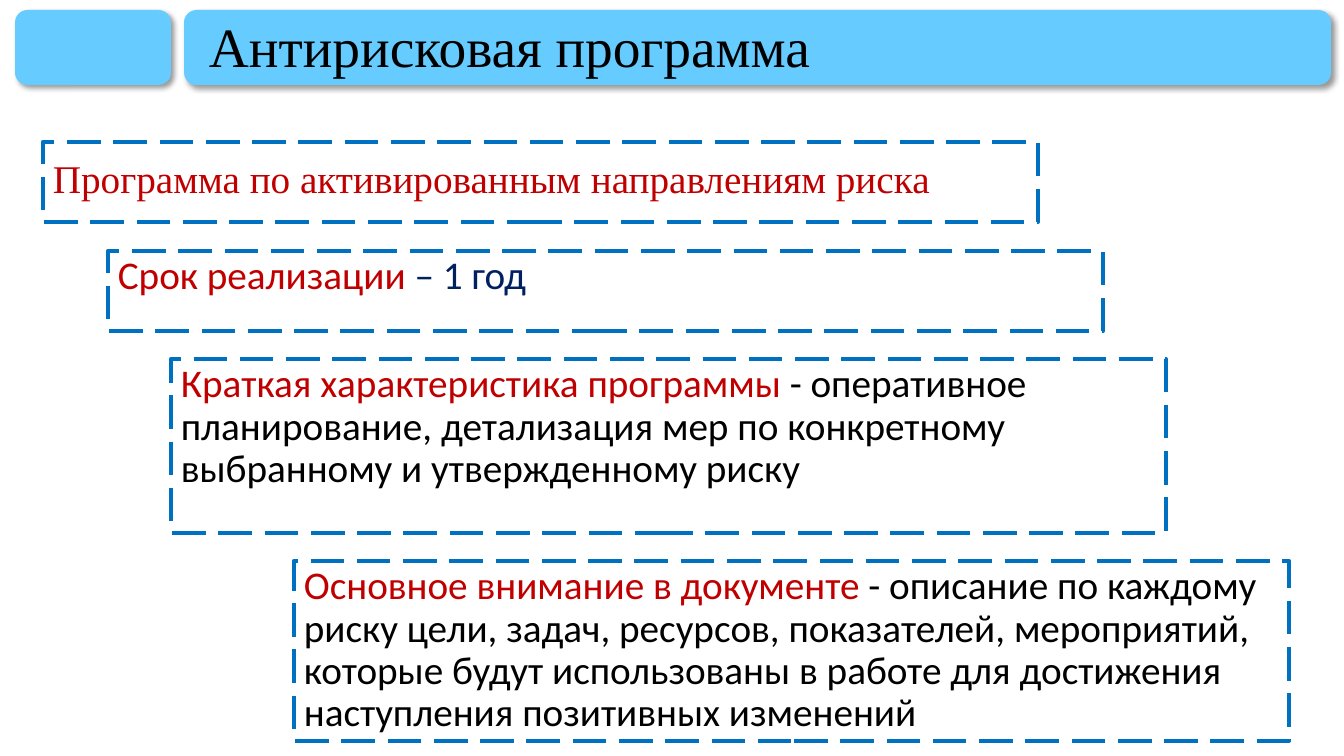
"""Builds a slide with a title bar and four stepped dashed boxes about a risk programme."""
from dataclasses import dataclass

import lxml.etree
import pptx
import pptx.dml.color
import pptx.enum.dml
import pptx.enum.shapes
import pptx.enum.text
import pptx.oxml
import pptx.oxml.ns
import pptx.util

SHAPES = pptx.enum.shapes.MSO_SHAPE
ALIGN = pptx.enum.text.PP_ALIGN
ANCHOR = pptx.enum.text.MSO_ANCHOR
PX = pptx.util.Inches(1) / 100.8


@dataclass(frozen=True)
class Theme:
    bar: str = "66CCFF"
    border: str = "0070C0"
    accent: str = "C00000"
    term: str = "002060"
    ink: str = "000000"
    serif: str = "Times New Roman"
    sans: str = "Calibri"
    title_size: float = 39.6
    body_size: float = 28
    border_width: float = 3


def color(value):
    return pptx.dml.color.RGBColor.from_string(value)


def apply(target, values):
    for name, value in values.items():
        setattr(target, name, value)


class SlideBuilder:
    def __init__(self, page, theme):
        self.page = page
        self.theme = theme

    def place(self, kind, frame):
        shape = self.page.shapes.add_shape(kind, *(round(side * PX) for side in frame))
        shape.shadow.inherit = False
        return shape

    def bar(self, *frame):
        shape = self.place(SHAPES.ROUNDED_RECTANGLE, frame)
        shape.fill.solid()
        shape.fill.fore_color.rgb = color(self.theme.bar)
        shape.line.fill.background()
        effects = shape._element.spPr.find(pptx.oxml.ns.qn("a:effectLst"))
        shadow = lxml.etree.SubElement(
            effects, pptx.oxml.ns.qn("a:outerShdw"),
            blurRad=str(pptx.util.Pt(4)), dist=str(pptx.util.Pt(3)),
            dir=str(45 * 60000), algn="tl", rotWithShape="0")
        tone = lxml.etree.SubElement(shadow, pptx.oxml.ns.qn("a:srgbClr"), val=self.theme.ink)
        lxml.etree.SubElement(tone, pptx.oxml.ns.qn("a:alpha"), val="40000")

    def add_text(self, shape, spans, font, size, anchor, **layout):
        apply(shape.text_frame, {"word_wrap": True, "vertical_anchor": anchor})
        para = shape.text_frame.paragraphs[0]
        apply(para, {"alignment": ALIGN.LEFT, "line_spacing": 0.9, **layout})
        for text, tone in spans:
            span = para.add_run()
            span.text = text
            apply(span.font, {"name": font, "size": pptx.util.Pt(size)})
            span.font.color.rgb = color(tone)

    def title(self, text, *frame):
        box = self.page.shapes.add_textbox(*(round(side * PX) for side in frame))
        self.add_text(box, [(text, self.theme.ink)], self.theme.serif,
                      self.theme.title_size, ANCHOR.MIDDLE)

    def dashed_box(self, frame, spans, font, **layout):
        shape = self.place(SHAPES.RECTANGLE, frame)
        shape.fill.background()
        shape.line.color.rgb = color(self.theme.border)
        apply(shape.line, {"width": pptx.util.Pt(self.theme.border_width),
                           "dash_style": pptx.enum.dml.MSO_LINE.LONG_DASH})
        self.add_text(shape, spans, font, self.theme.body_size, ANCHOR.TOP, **layout)


def main():
    deck = pptx.Presentation()
    apply(deck, {"slide_width": round(1344 * PX), "slide_height": round(756 * PX)})
    theme = Theme()
    builder = SlideBuilder(deck.slides.add_slide(deck.slide_layouts[6]), theme)

    builder.bar(184, 10, 1147, 75)
    builder.bar(15, 10, 156, 75)
    builder.title("Антирисковая программа", 199, 16, 1119, 67)

    width = 995
    builder.dashed_box(
        (43, 142, width, 80),
        [("Программа по активированным направлениям риска", theme.accent)],
        theme.serif, alignment=ALIGN.JUSTIFY, line_spacing=1.15)
    details = [
        (108, 251, 80, "Срок реализации ", "– 1 год", theme.term),
        (171, 359, 174, "Краткая характеристика программы ",
         "- оперативное планирование, детализация мер по конкретному "
         "выбранному и утвержденному риску", theme.ink),
        (294, 561, 180, "Основное внимание в документе ",
         "- описание по каждому риску цели, задач, ресурсов, показателей, "
         "мероприятий, которые будут использованы в работе для достижения "
         "наступления позитивных изменений", theme.ink),
    ]
    for left, top, height, heading, text, tone in details:
        builder.dashed_box((left, top, width, height),
                           [(heading, theme.accent), (text, tone)], theme.sans)

    deck.save("out.pptx")


if __name__ == "__main__":
    main()
